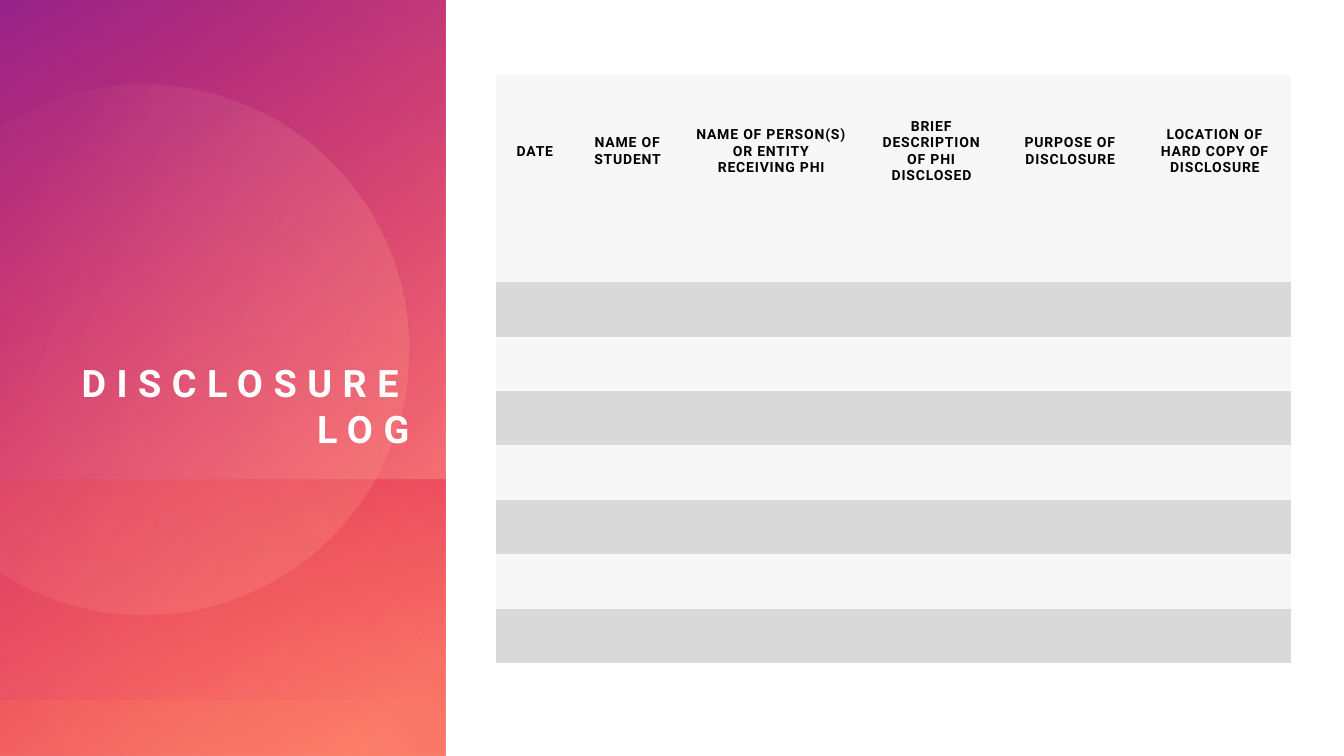
from math import acos, cos, sin, tan

from lxml.etree import SubElement
from pptx import Presentation
from pptx.dml.color import RGBColor
from pptx.enum.shapes import MSO_SHAPE
from pptx.enum.text import MSO_ANCHOR, MSO_AUTO_SIZE, PP_ALIGN
from pptx.oxml.ns import qn
from pptx.util import Pt

PX = 9144  # 100 px to the inch
FONT = "Roboto"
WHITE = RGBColor(0xFF, 0xFF, 0xFF)
BLACK = RGBColor(0x00, 0x00, 0x00)
LIGHT_ROW = RGBColor(0xF7, 0xF7, 0xF7)
DARK_ROW = RGBColor(0xD9, 0xD9, 0xD9)
CORAL = RGBColor(0xFF, 0x90, 0x7A)
PEACH = RGBColor(0xFF, 0xDB, 0xCC)
PINK = RGBColor(0xFF, 0x50, 0x76)
CRIMSON = RGBColor(0xDA, 0x00, 0x2F)
ORANGE = RGBColor(0xFE, 0x4A, 0x00)
PURPLE = RGBColor(0x92, 0x24, 0x8E)

# Heading and column width in px
COLUMNS = [
    ("DATE", 77),
    ("NAME OF STUDENT", 107),
    ("NAME OF PERSON(S) OR ENTITY RECEIVING PHI", 178),
    ("BRIEF DESCRIPTION OF PHI DISCLOSED", 140),
    ("PURPOSE OF DISCLOSURE", 135),
    ("LOCATION OF HARD COPY OF DISCLOSURE", 152),
]
HEADER_HEIGHT, ROW_HEIGHT, LOG_ROWS = 152, 54, 8


def fill_gradient(shape, angle, stops):
    """Stops are (position %, colour, opacity %)."""
    shape.shadow.inherit = False
    shape.line.fill.background()
    shape.fill.background()
    properties = shape.element.spPr
    no_fill = properties.find(qn("a:noFill"))
    gradient = SubElement(properties, qn("a:gradFill"), rotWithShape="1")
    properties.replace(no_fill, gradient)
    stop_list = SubElement(gradient, qn("a:gsLst"))
    for position, colour, opacity in stops:
        stop = SubElement(stop_list, qn("a:gs"), pos=str(position * 1000))
        tint = SubElement(stop, qn("a:srgbClr"), val=str(colour))
        SubElement(tint, qn("a:alpha"), val=str(opacity * 1000))
    SubElement(gradient, qn("a:lin"), ang=str(angle * 60000), scaled="0")


def format_runs(paragraph, size, colour, spacing):
    for run in paragraph.runs:
        font = run.font
        font.name, font.size, font.bold = FONT, Pt(size), True
        font.color.rgb = colour
        run.font._element.set("spc", str(spacing))


def add_wash(slide, left, top, width, height, angle, stops):
    """Mirrored rectangle turned a quarter, covering the given box."""
    wash = slide.shapes.add_shape(
        MSO_SHAPE.RECTANGLE,
        (left + (width - height) / 2) * PX, (top + (height - width) / 2) * PX,
        height * PX, width * PX)
    wash.rotation = 90
    wash.element.spPr.find(qn("a:xfrm")).set("flipH", "1")
    fill_gradient(wash, angle, stops)


def add_cut_circle(slide, left, centre_x, centre_y, radius):
    """Circle cut off by the panel's left edge, drawn as four Bézier arcs."""
    limit = acos((left - centre_x) / radius)
    arcs = 4
    sweep = 2 * limit / arcs
    handle = 4 / 3 * tan(sweep / 4)

    def place(angle, reach):
        """Point on the circle, moved along its tangent by reach radii."""
        return ((centre_x + radius * (cos(angle) - reach * sin(angle))) * PX,
                (centre_y + radius * (sin(angle) + reach * cos(angle))) * PX)

    points = []
    for arc in range(arcs):
        start = arc * sweep - limit
        end = start + sweep
        points += [place(start, handle), place(end, -handle), place(end, 0)]
    outline = slide.shapes.build_freeform(*place(-limit, 0))
    outline.add_line_segments(points, close=True)
    circle = outline.convert_to_shape()

    # Each three points become one curve
    lines = list(circle.element.spPr.iter(qn("a:lnTo")))
    for first in range(0, len(lines), 3):
        curve = lines[first].makeelement(qn("a:cubicBezTo"))
        lines[first].addprevious(curve)
        for line in lines[first:first + 3]:
            curve.append(line[0])
            line.getparent().remove(line)
    fill_gradient(circle, 22, [(13, PEACH, 2), (100, CORAL, 29)])


def add_title_panel(slide, left, top, width, height):
    # Colour washes
    add_wash(slide, left, top, width, height, 50, [(8, CORAL, 100), (100, CRIMSON, 89)])
    add_wash(slide, left, top, width, height - 56, 30, [(0, PINK, 0), (99, PURPLE, 92)])
    add_wash(slide, left, top + height - 274, width, 274, 130,
             [(2, CRIMSON, 28), (100, ORANGE, 0)])
    add_cut_circle(slide, left, left + 142, top + 347, 263)

    # Title, brought in front of the washes
    title = slide.shapes.title
    slide.shapes._spTree.append(title.element)
    title.left, title.top = (left + 52) * PX, (top + 75) * PX
    title.width, title.height = (width - 88) * PX, 373 * PX
    frame = title.text_frame
    frame.text = "DISCLOSURE LOG"
    frame.word_wrap = True
    frame.auto_size = MSO_AUTO_SIZE.NONE
    frame.vertical_anchor = MSO_ANCHOR.BOTTOM
    frame.margin_left = frame.margin_right = frame.margin_top = frame.margin_bottom = 0
    paragraph = frame.paragraphs[0]
    paragraph.alignment = PP_ALIGN.RIGHT
    paragraph.line_spacing = 1.02
    format_runs(paragraph, 27, WHITE, 750)


def add_log_table(slide, left, top):
    width = sum(column_width for _, column_width in COLUMNS)
    height = HEADER_HEIGHT + LOG_ROWS * ROW_HEIGHT
    log = slide.shapes.add_table(LOG_ROWS + 1, len(COLUMNS), left * PX, top * PX,
                                 width * PX, height * PX).table
    log.first_row = log.horz_banding = False
    # Built-in style without grid lines
    style = log._tbl.tblPr.find(qn("a:tableStyleId"))
    style.text = "{2D5ABB26-0587-4C30-8999-92F81FD0307C}"

    for index, row in enumerate(log.rows):
        row.height = (ROW_HEIGHT if index else HEADER_HEIGHT) * PX
        for cell in row.cells:
            cell.fill.solid()
            cell.fill.fore_color.rgb = DARK_ROW if index and index % 2 == 0 else LIGHT_ROW

    for index, (heading, column_width) in enumerate(COLUMNS):
        log.columns[index].width = column_width * PX
        cell = log.cell(0, index)
        cell.text_frame.text = heading
        cell.vertical_anchor = MSO_ANCHOR.MIDDLE
        cell.margin_left = cell.margin_right = cell.margin_top = cell.margin_bottom = 13 * PX
        paragraph = cell.text_frame.paragraphs[0]
        paragraph.alignment = PP_ALIGN.CENTER
        format_runs(paragraph, 10, BLACK, 60)


def main():
    deck = Presentation()
    deck.slide_width, deck.slide_height = 1333 * PX, 750 * PX
    slide = deck.slides.add_slide(deck.slide_layouts[5])
    slide.background.fill.solid()
    slide.background.fill.fore_color.rgb = WHITE
    add_title_panel(slide, 0, 0, 442, 750)
    add_log_table(slide, 492, 74)
    deck.save("out.pptx")


if __name__ == "__main__":
    main()
